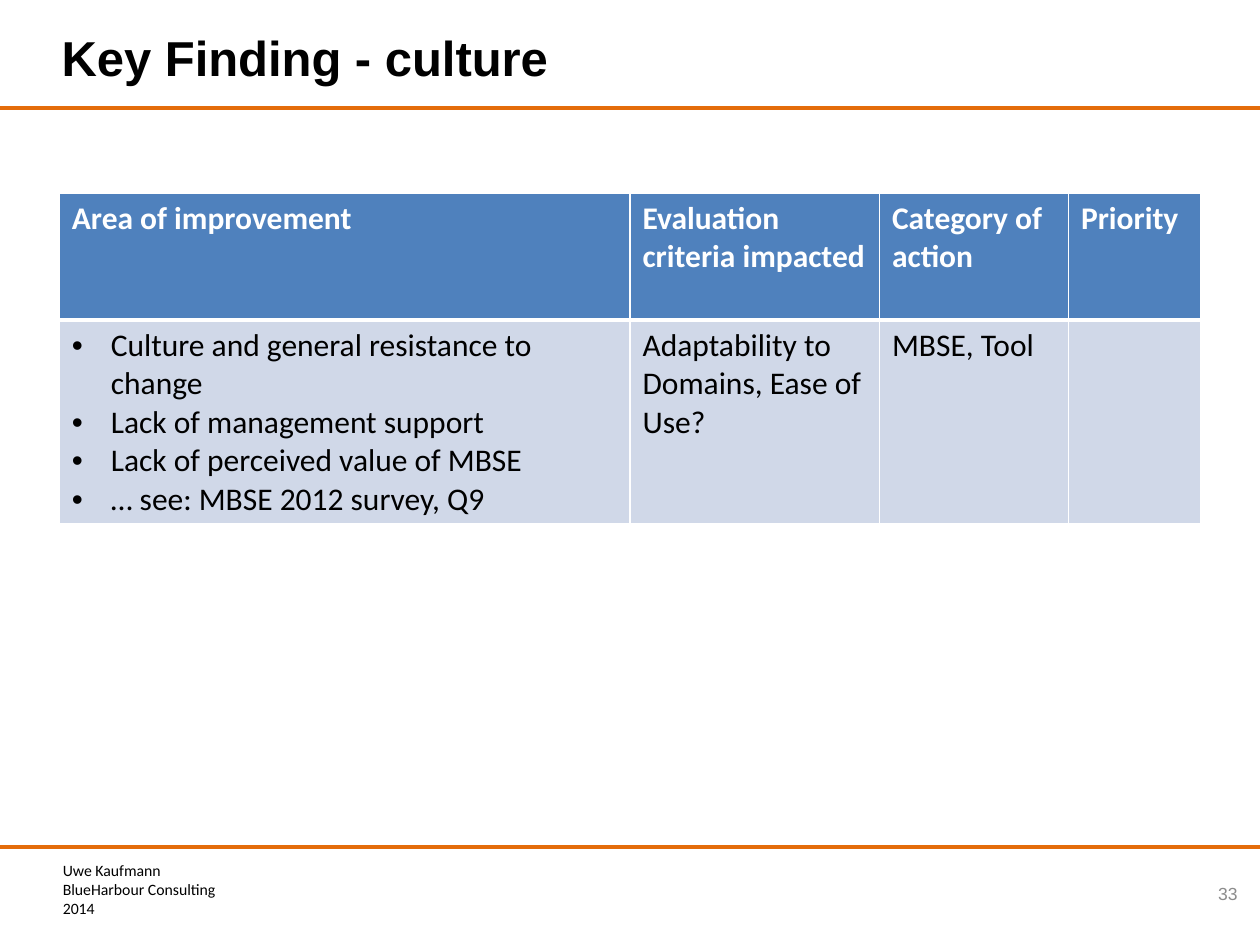
from lxml.etree import SubElement
from pptx import Presentation
from pptx.dml.color import RGBColor
from pptx.enum.shapes import MSO_CONNECTOR
from pptx.enum.text import MSO_ANCHOR, PP_ALIGN
from pptx.oxml.ns import qn
from pptx.util import Inches, Pt

WIDTH, HEIGHT = 10, 7.5
ORANGE, BLUE, PALE, WHITE, BLACK, GREY = (
    "E46C0A", "4F81BD", "D0D8E8", "FFFFFF", "000000", "8C8C8C")
HEADINGS = ["Area of improvement", "Evaluation criteria impacted",
            "Category of action", "Priority"]
FINDINGS = ["Culture and general resistance to change",
            "Lack of management support",
            "Lack of perceived value of MBSE",
            "… see: MBSE 2012 survey, Q9"]
DETAILS = ["\n".join(FINDINGS), "Adaptability to Domains, Ease of Use?",
           "MBSE, Tool", ""]
COLUMN_WIDTHS = [4.53, 1.98, 1.5, 1.05]
ROW_HEIGHTS = [1.01, 1.62]


def color(code):
    """Turn a hex string into a colour."""
    return RGBColor.from_string(code)


def style_text(frame, size, font, ink, bold=False, align=PP_ALIGN.LEFT):
    """Format every paragraph and run of a text frame."""
    for paragraph in frame.paragraphs:
        paragraph.alignment = align
        for part in [paragraph, *paragraph.runs]:
            part.font.size, part.font.name = Pt(size), font
            part.font.bold = bold
            part.font.color.rgb = color(ink)


def add_text(slide, box, text, anchor=MSO_ANCHOR.MIDDLE, wrap=True, **style):
    """Place formatted text in a box of left, top, width and height."""
    frame = slide.shapes.add_textbox(*map(Inches, box)).text_frame
    frame.text = text
    frame.word_wrap, frame.vertical_anchor = wrap, anchor
    style_text(frame, **style)


def add_rule(slide, top):
    """Draw an orange rule across the slide."""
    rule = slide.shapes.add_connector(
        MSO_CONNECTOR.STRAIGHT, 0, Inches(top), Inches(WIDTH), Inches(top))
    rule.line.color.rgb, rule.line.width = color(ORANGE), Pt(2.25)
    SubElement(rule._element.spPr, qn("a:effectLst"))


def add_borders(cell, **widths):
    """Give a cell white borders with the widths named by side."""
    properties = cell._tc.get_or_add_tcPr()
    for side, width in widths.items():
        border = SubElement(properties, qn(f"a:ln{side}"), w=str(Pt(width)))
        fill = SubElement(border, qn("a:solidFill"))
        SubElement(fill, qn("a:srgbClr"), val=WHITE)


def add_bullets(frame, indent):
    """Give each paragraph a hanging bullet."""
    for paragraph in frame.paragraphs:
        properties = paragraph._p.get_or_add_pPr()
        properties.set("marL", str(Inches(indent)))
        properties.set("indent", str(-Inches(indent)))
        SubElement(properties, qn("a:buFont"), typeface="Arial")
        SubElement(properties, qn("a:buChar"), char="•")


def add_header(slide, left, top, width, height):
    """Place the title and the rule under it."""
    add_text(slide, (left, top, width, height), "Key Finding - culture",
             size=28, font="Arial", ink=BLACK, bold=True)
    add_rule(slide, top + height + 0.02)


def add_findings(slide, left, top):
    """Place the table of findings at a corner."""
    box = (left, top, sum(COLUMN_WIDTHS), sum(ROW_HEIGHTS))
    table = slide.shapes.add_table(
        len(ROW_HEIGHTS), len(COLUMN_WIDTHS), *map(Inches, box)).table
    for column, width in zip(table.columns, COLUMN_WIDTHS):
        column.width = Inches(width)
    looks = [(HEADINGS, BLUE, WHITE, True, 1, 3),
             (DETAILS, PALE, BLACK, False, 3, 1)]
    for row, height, look in zip(table.rows, ROW_HEIGHTS, looks):
        texts, fill, ink, bold, above, below = look
        row.height = Inches(height)
        for cell, text in zip(row.cells, texts):
            cell.text_frame.text = text
            add_borders(cell, L=1, R=1, T=above, B=below)
            cell.fill.solid()
            cell.fill.fore_color.rgb = color(fill)
            if text == DETAILS[0]:
                add_bullets(cell.text_frame, 0.31)
            style_text(cell.text_frame, 18, "Calibri", ink, bold)


def add_footer(slide, left, top, width, height):
    """Place the lower rule, the author lines and the page number."""
    add_rule(slide, top)
    add_text(slide, (left, top + 0.06, 1.55, height),
             "Uwe Kaufmann\nBlueHarbour Consulting\n2014",
             anchor=MSO_ANCHOR.TOP, wrap=False,
             size=9, font="Calibri", ink=BLACK)
    add_text(slide, (left + width - 0.62, top + 0.17, 0.62, 0.4), "33",
             size=10, font="Arial", ink=GREY, align=PP_ALIGN.RIGHT)


def main():
    """Build and save the slide."""
    deck = Presentation()
    deck.slide_width, deck.slide_height = Inches(WIDTH), Inches(HEIGHT)
    slide = deck.slides.add_slide(deck.slide_layouts[6])
    add_header(slide, 0.39, 0.06, 9, 0.78)
    add_findings(slide, 0.47, 1.53)
    add_footer(slide, 0.4, 6.72, 9.52, 0.56)
    deck.save("out.pptx")


if __name__ == "__main__":
    main()
